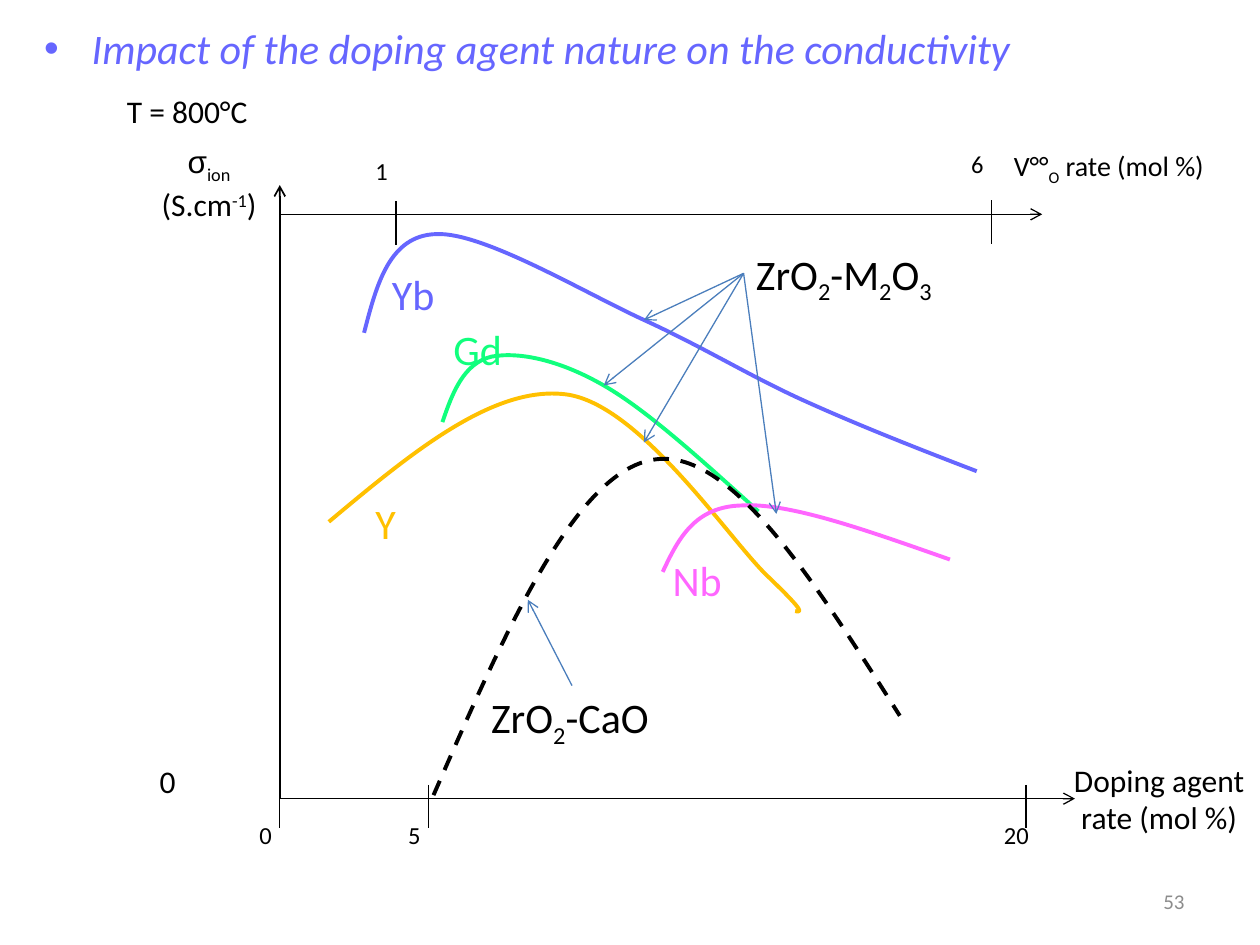
from lxml.etree import SubElement
from pptx import Presentation
from pptx.dml.color import RGBColor
from pptx.enum.dml import MSO_LINE
from pptx.enum.shapes import MSO_CONNECTOR
from pptx.enum.text import MSO_ANCHOR, MSO_AUTO_SIZE, PP_ALIGN
from pptx.oxml.ns import qn
from pptx.util import Cm, Pt

BLACK = RGBColor(0, 0, 0)
GRAY = RGBColor(0x8C, 0x8C, 0x8C)
BLUE = RGBColor(0x4B, 0x7E, 0xBC)
VIOLET = RGBColor(0x66, 0x66, 0xFF)
GREEN = RGBColor(0x11, 0xFF, 0x7D)
GOLD = RGBColor(0xFF, 0xC0, 0x00)
PINK = RGBColor(0xFF, 0x66, 0xFF)

LEFT, BASE, TOP = 5.64, 16.1, 4.32  # the axes
TICK = 0.87
SHIFTS = {"_": "-25000", "^": "30000"}

# Each curve is a start point, then three points per Bezier segment.
CURVES = [
    (VIOLET, [(7.34, 6.71), (7.59, 5.74), (7.85, 4.75), (8.79, 4.72),
              (9.73, 4.67), (11.76, 5.89), (12.98, 6.45),
              (14.2, 7.01), (15.04, 7.54), (16.15, 8.05),
              (17.27, 8.56), (18.49, 9.04), (19.69, 9.5)]),
    (GREEN, [(8.92, 8.51), (9.12, 7.92), (9.35, 7.32), (9.91, 7.19),
             (10.44, 7.09), (11.25, 7.24), (12.17, 7.77),
             (13.06, 8.28), (14.17, 9.3), (15.29, 10.31)]),
    (GOLD, [(6.63, 10.52), (8.28, 9.14), (9.93, 7.77), (11.4, 7.95),
            (12.9, 8.13), (14.73, 10.92), (15.49, 11.63),
            (16.26, 12.37), (16.15, 12.34), (16.03, 12.32)]),
    (PINK, [(13.36, 11.53), (13.67, 10.87), (14, 10.21), (14.96, 10.19),
            (15.93, 10.13), (17.55, 10.72), (19.15, 11.28)]),
    (BLACK, [(8.74, 16.03), (10.16, 12.78), (11.58, 9.53), (13.16, 9.27),
             (14.71, 8.99), (16.41, 11.71), (18.14, 14.43)]),
]


def add_text(slide, box, lines, size, color=BLACK, align=PP_ALIGN.LEFT,
             wrap=False):
    """Write lines whose parts are split by |; _ lowers a part, ^ raises it."""
    shape = slide.shapes.add_textbox(*map(Cm, box))
    frame = shape.text_frame
    frame.word_wrap = wrap
    frame.auto_size = MSO_AUTO_SIZE.SHAPE_TO_FIT_TEXT
    for i, line in enumerate(lines.split("\n")):
        para = frame.add_paragraph() if i else frame.paragraphs[0]
        para.alignment = align
        para.font.name = "Calibri"
        para.font.size = Pt(size)
        para.font.color.rgb = color
        for part in line.split("|"):
            run = para.add_run()
            run.text = part.lstrip("_^")
            if part[0] in SHIFTS:
                run._r.get_or_add_rPr().set("baseline", SHIFTS[part[0]])
    return frame


def add_line(slide, start, end, color=BLACK, width=0.75, arrow=False):
    line = slide.shapes.add_connector(
        MSO_CONNECTOR.STRAIGHT, *map(Cm, start + end))
    line.line.color.rgb = color
    line.line.width = Pt(width)
    if arrow:
        SubElement(line.line._get_or_add_ln(), qn("a:tailEnd"), type="arrow")
    SubElement(line._element.spPr, qn("a:effectLst"))


def add_curve(slide, color, points):
    first, *rest = [(Cm(x), Cm(y)) for x, y in points]
    pen = slide.shapes.build_freeform(*first)
    pen.add_line_segments(rest, close=False)
    shape = pen.convert_to_shape()
    shape.shadow.inherit = False
    shape.fill.background()
    shape.line.color.rgb = color
    shape.line.width = Pt(2.25)
    route = shape._element.find(".//" + qn("a:path"))
    steps = route.findall(qn("a:lnTo"))
    for i in range(0, len(steps), 3):
        bend = SubElement(route, qn("a:cubicBezTo"))
        for step in steps[i:i + 3]:
            bend.append(step[0])
            route.remove(step)
    return shape


def add_title(slide):
    frame = add_text(slide, (0.64, 0.33, 24.61, 1.27),
                     "Impact of the doping agent nature on the conductivity",
                     24, VIOLET, wrap=True)
    para = frame.paragraphs[0]
    para.font.italic = True
    props = para._p.get_or_add_pPr()
    props.set("marL", str(Cm(0.96)))
    props.set("indent", str(-Cm(0.96)))
    font = SubElement(props, qn("a:buFont"), typeface="Arial")
    mark = SubElement(props, qn("a:buChar"), char="•")
    props.insert(0, font)
    props.insert(1, mark)


def add_axes(slide):
    add_line(slide, (LEFT, BASE), (LEFT, 3.73), width=1, arrow=True)
    add_line(slide, (LEFT, BASE), (21.67, BASE), arrow=True)
    add_line(slide, (LEFT, TOP), (21.01, TOP), arrow=True)
    for x, y in [(7.98, 4.06), (19.99, 4.04),
                 (LEFT, 15.82), (8.64, 15.82), (20.68, 15.82)]:
        add_line(slide, (x, y), (x, y + TICK))
    for text, x, y in [("1", 7.32, 3.02), ("6", 19.33, 2.87),
                       ("0", 4.98, 16.41), ("5", 7.98, 16.41),
                       ("20", 19.99, 16.41)]:
        add_text(slide, (x, y, 1.7 if len(text) > 1 else 1.27, 1.22), text, 14)
    add_text(slide, (2.97, 15.24, 1.4, 1.47), "0", 18)
    sigma = add_text(slide, (2.13, 2.74, 4.17, 2.59),
                     "σ|_ion\n(S.cm|^-1|)", 18, align=PP_ALIGN.CENTER)
    sigma.paragraphs[0].runs[0].font.name = "Arial"
    add_text(slide, (20.19, 2.87, 5.44, 0.94), "V°°|_O| rate (mol %)", 16,
             wrap=True)
    add_text(slide, (17.09, 15.21, 12.7, 1.8), "Doping agent \nrate (mol %) ",
             18, align=PP_ALIGN.CENTER, wrap=True)


def add_plot(slide):
    for color, points in CURVES:
        curve = add_curve(slide, color, points)
        if color == BLACK:
            curve.line.dash_style = MSO_LINE.DASH
    for end in [(12.98, 6.45), (12.17, 7.77), (12.98, 8.92), (15.65, 10.36)]:
        add_line(slide, (14.99, 5.51), end, BLUE, arrow=True)
    add_line(slide, (11.53, 13.82), (10.64, 12.09), BLUE, arrow=True)
    for text, x, y, width, color in [
            ("ZrO|_2|-M|_2|O|_3", 14.99, 4.88, 4.22, BLACK),
            ("ZrO|_2|-CaO", 9.65, 13.82, 3.76, BLACK),
            ("Yb", 7.65, 5.28, 1.37, VIOLET),
            ("Gd", 8.89, 6.4, 1.5, GREEN),
            ("Y", 7.32, 9.91, 0.94, GOLD),
            ("Nb", 13.31, 11.05, 1.52, PINK)]:
        add_text(slide, (x, y, width, 1.27), text, 24, color)


def main():
    deck = Presentation()
    deck.slide_width, deck.slide_height = Cm(25.4), Cm(19.05)
    slide = deck.slides.add_slide(deck.slide_layouts[6])
    add_text(slide, (2.31, 1.73, 2.97, 1.02), "T = 800°C", 18)
    add_axes(slide)
    add_plot(slide)
    page = add_text(slide, (18.21, 17.65, 5.92, 1.02), "53", 12, GRAY,
                    PP_ALIGN.RIGHT, wrap=True)
    page.auto_size = MSO_AUTO_SIZE.NONE
    page.vertical_anchor = MSO_ANCHOR.MIDDLE
    add_title(slide)
    deck.save("out.pptx")


if __name__ == "__main__":
    main()
